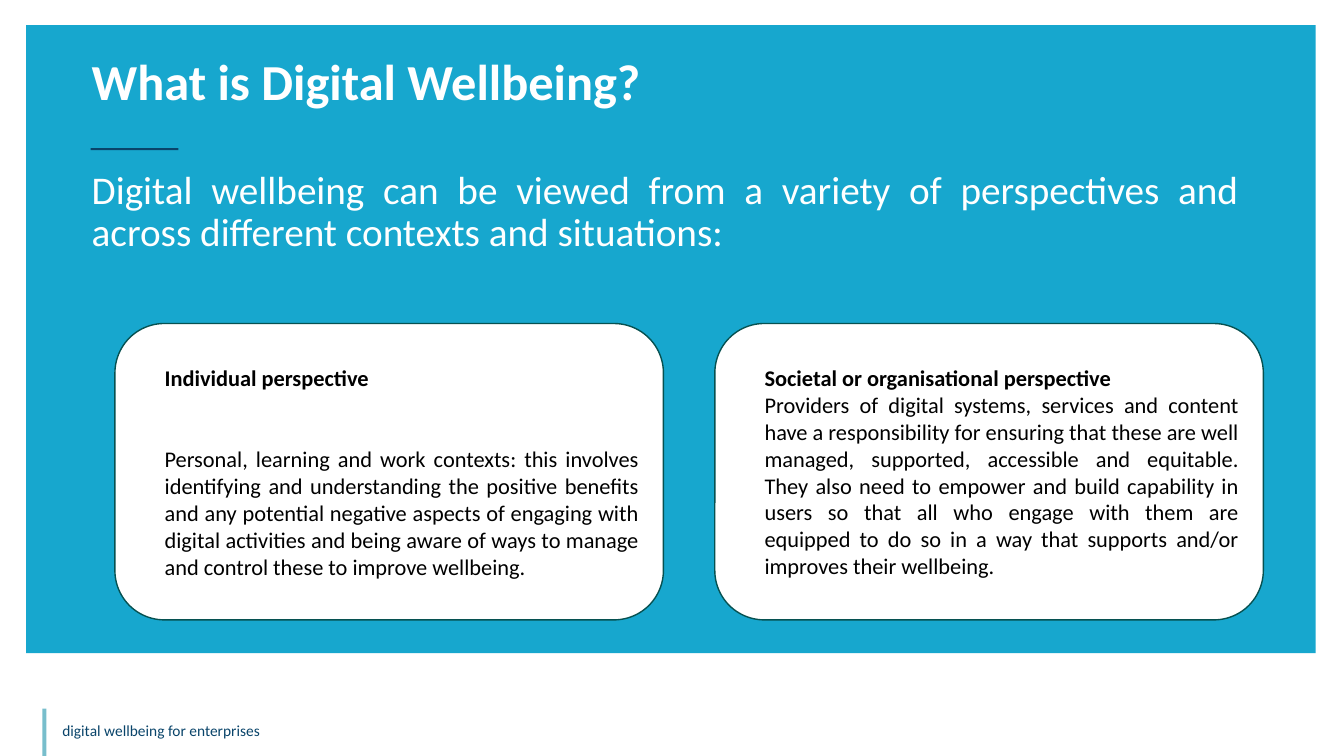
from pptx import Presentation
from pptx.dml.color import RGBColor
from pptx.enum.shapes import MSO_SHAPE
from pptx.enum.text import MSO_ANCHOR, PP_ALIGN
from pptx.util import Inches, Pt

COLORS = {
    "panel": "17A7CE",
    "navy": "09446A",
    "bar": "78BECC",
    "white": "FFFFFF",
    "black": "000000",
    "outline": "065151",
}
FONT = "Calibri"
INDENT = 0.35

CARDS = [
    (
        "Individual perspective",
        "Personal, learning and work contexts: this involves identifying and understanding "
        "the positive benefits and any potential negative aspects of engaging with digital "
        "activities and being aware of ways to manage and control these to improve wellbeing.",
        39,
    ),
    (
        "Societal or organisational perspective",
        "Providers of digital systems, services and content have a responsibility for ensuring "
        "that these are well managed, supported, accessible and equitable. They also need to "
        "empower and build capability in users so that all who engage with them are equipped to "
        "do so in a way that supports and/or improves their wellbeing.",
        0,
    ),
]


def color(name):
    return RGBColor.from_string(COLORS[name])


def add_block(slide, kind, box, fill, line=None):
    shape = slide.shapes.add_shape(kind, *map(Inches, box))
    shape.shadow.inherit = False
    shape.fill.solid()
    shape.fill.fore_color.rgb = color(fill)
    if line:
        shape.line.color.rgb = color(line)
        shape.line.width = Pt(1)
    else:
        shape.line.fill.background()
    return shape


def style(paragraph, text, size, ink, bold=False, align=PP_ALIGN.LEFT):
    paragraph.text = text
    paragraph.alignment = align
    paragraph.font.name = FONT
    paragraph.font.size = Pt(size)
    paragraph.font.bold = bold
    paragraph.font.color.rgb = color(ink)


def add_text(slide, box, text, size, ink, indent=0.1, **options):
    frame = slide.shapes.add_textbox(*map(Inches, box)).text_frame
    frame.word_wrap = True
    frame.margin_left = Inches(indent)
    paragraph = frame.paragraphs[0]
    style(paragraph, text, size, ink, **options)
    return paragraph


def add_header(slide, left, top, width):
    title = add_text(slide, (left, top, 6.1, 0.83), "What is Digital Wellbeing?",
                     36, "white", INDENT, bold=True)
    add_block(slide, MSO_SHAPE.RECTANGLE, (left + 0.34, top + 0.95, 0.87, 0.02), "navy")
    intro = add_text(
        slide, (left, top + 1.12, width, 1.2),
        "Digital wellbeing can be viewed from a variety of perspectives and "
        "across different contexts and situations:",
        28, "white", INDENT, align=PP_ALIGN.JUSTIFY,
    )
    for paragraph in (title, intro):
        paragraph.line_spacing = 0.9
        paragraph.space_before = Pt(10)


def add_card(slide, box, heading, body, gap):
    card = add_block(slide, MSO_SHAPE.ROUNDED_RECTANGLE, box, "white", "outline")
    frame = card.text_frame
    frame.word_wrap = True
    frame.vertical_anchor = MSO_ANCHOR.MIDDLE
    frame.margin_left = Inches(INDENT)
    title = frame.paragraphs[0]
    style(title, heading, 16, "black", bold=True, align=PP_ALIGN.JUSTIFY)
    title.space_after = Pt(gap)
    style(frame.add_paragraph(), body, 16, "black", align=PP_ALIGN.JUSTIFY)


def add_cards(slide, left, top, width, height, gap):
    card_width = (width - gap * (len(CARDS) - 1)) / len(CARDS)
    for index, card in enumerate(CARDS):
        card_left = left + index * (card_width + gap)
        add_card(slide, (card_left, top, card_width, height), *card)


def add_footer(slide, left, top):
    add_block(slide, MSO_SHAPE.RECTANGLE, (left, top, 0.04, 0.47), "bar")
    add_text(slide, (left + 0.1, top + 0.07, 12.5, 0.29),
             "digital wellbeing for enterprises", 11, "navy")


def main():
    presentation = Presentation()
    presentation.slide_width = Inches(13.33)
    presentation.slide_height = Inches(7.5)
    slide = presentation.slides.add_slide(presentation.slide_layouts[6])
    add_block(slide, MSO_SHAPE.RECTANGLE, (0.26, 0.25, 12.79, 6.23), "panel")
    add_header(slide, 0.56, 0.52, 11.82)
    add_cards(slide, 1.14, 3.21, 11.39, 2.94, 0.51)
    add_footer(slide, 0.42, 7.03)
    presentation.save("out.pptx")


if __name__ == "__main__":
    main()
